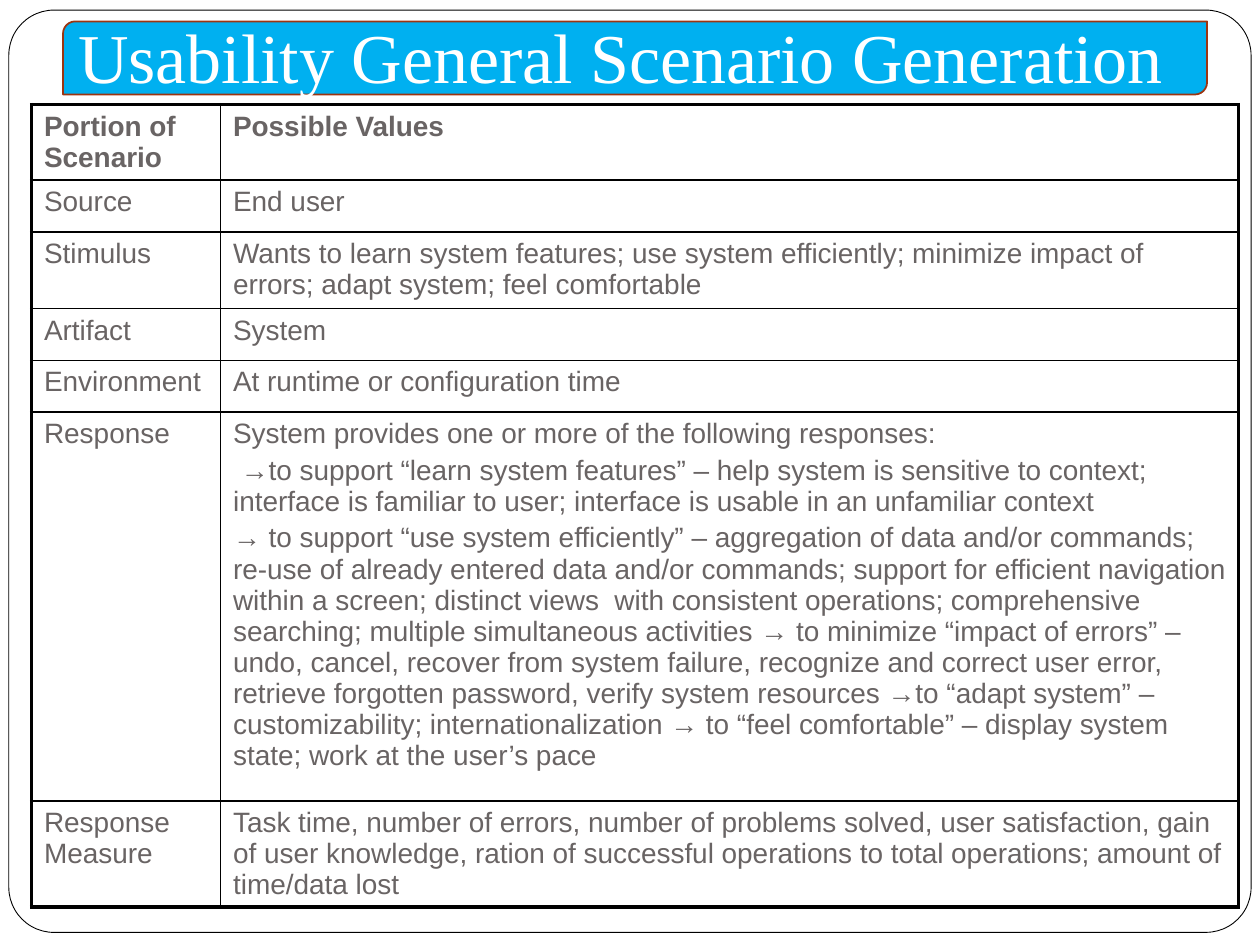
from pptx import Presentation
from pptx.dml.color import RGBColor
from pptx.enum.shapes import MSO_SHAPE as Shape
from pptx.enum.text import MSO_ANCHOR as Anchor, MSO_AUTO_SIZE as Auto, PP_ALIGN as Align
from pptx.oxml import parse_xml
from pptx.oxml.ns import nsdecls
from pptx.util import Inches, Pt

THICK, THIN = 2.25, 1
COLS = [1.5, 8.08]
ROWS = [
    (0.6, "Portion of Scenario", ["Possible Values"]),
    (0.41, "Source", ["End user"]),
    (0.61, "Stimulus", [
        "Wants to learn system features; use system efficiently; minimize impact of "
        "errors; adapt system; feel comfortable"]),
    (0.41, "Artifact", ["System"]),
    (0.41, "Environment", ["At runtime or configuration time"]),
    (3.09, "Response", [
        "System provides one or more of the following responses:",
        " →to support “learn system features” – help system is sensitive to context; "
        "interface is familiar to user; interface is usable in an unfamiliar context",
        "→ to support “use system efficiently” – aggregation of data and/or commands; "
        "re-use of already entered data and/or commands; support for efficient "
        "navigation within a screen; distinct views  with consistent operations; "
        "comprehensive searching; multiple simultaneous activities → to minimize "
        "“impact of errors” – undo, cancel, recover from system failure, recognize and "
        "correct user error, retrieve forgotten password, verify system resources "
        "→to “adapt system” – customizability; internationalization → to “feel "
        "comfortable” – display system state; work at the user’s pace"]),
    (0.84, "Response Measure", [
        "Task time, number of errors, number of problems solved, user satisfaction, "
        "gain of user knowledge, ration of successful operations to total operations; "
        "amount of time/data lost"]),
]


def color(code):
    return RGBColor.from_string(code)


def style(para, name, size, code, bold=False):
    font = para.font
    font.name, font.size, font.bold = name, Pt(size), bold
    font.color.rgb = color(code)


def add_panel(slide, kind, box, fill, line, width, level):
    panel = slide.shapes.add_shape(kind, *map(Inches, box))
    panel.shadow.inherit = False
    panel.fill.solid()
    panel.fill.fore_color.rgb = color(fill)
    panel.line.color.rgb = color(line)
    panel.line.width = Pt(width)
    # Keep panels behind the title; the tree's first two entries are not shapes
    slide.shapes._spTree.insert(2 + level, panel._element)
    return panel


def add_frame(slide, *box):
    frame = add_panel(slide, Shape.ROUNDED_RECTANGLE, box, "FFFFFF", "000000", 0.5, 0)
    frame.adjustments[0] = 0.049


def add_title(slide, x, y, w, h, text):
    # Banner
    add_panel(slide, Shape.ROUND_2_DIAG_RECTANGLE, (x, y, w, h),
              "00B0F0", "9C3511", 1, 1)
    # Title, with room above and below so that the line fits
    title = slide.shapes.title
    title.left, title.top = Inches(x), Inches(y - 0.08)
    title.width, title.height = Inches(w), Inches(h + 0.12)
    frame = title.text_frame
    frame.text = text
    frame.auto_size = Auto.NONE
    frame.word_wrap = True
    frame.vertical_anchor = Anchor.MIDDLE
    frame.margin_top = frame.margin_bottom = 0
    frame.margin_left = Inches(0.12)
    para = frame.paragraphs[0]
    para.alignment = Align.LEFT
    para.space_before, para.line_spacing = Pt(0), 1.0
    style(para, "Times New Roman", 40, "FFFFFF")


def add_borders(cell, sides):
    for side, width in sides.items():
        cell._tc.get_or_add_tcPr().append(parse_xml(
            f'<a:ln{side} {nsdecls("a")} w="{Pt(width)}"><a:solidFill>'
            f'<a:srgbClr val="000000"/></a:solidFill></a:ln{side}>'))


def add_grid(slide, x, y, w):
    height = sum(row[0] for row in ROWS)
    table = slide.shapes.add_table(
        len(ROWS), len(COLS), Inches(x), Inches(y), Inches(w), Inches(height)).table
    table.first_row = table.horz_banding = False
    for col, width in zip(table.columns, COLS):
        col.width = Inches(width)
    last = len(ROWS) - 1
    for r, (tall, label, values) in enumerate(ROWS):
        table.rows[r].height = Inches(tall)
        for c, lines in enumerate([[label], values]):
            cell = table.cell(r, c)
            # Thick outer edge, thin inner rules
            add_borders(cell, {
                "L": THICK if c == 0 else THIN,
                "R": THICK if c == 1 else THIN,
                "T": THICK if r == 0 else THIN,
                "B": THICK if r == last else THIN})
            cell.fill.background()
            cell.margin_right = Inches(0.08)
            cell.text = "\n".join(lines)
            for para in cell.text_frame.paragraphs:
                para.space_before = Pt(3.2)
                style(para, "Arial", 16, "696464", bold=r == 0)


def main():
    deck = Presentation()
    deck.slide_width, deck.slide_height = Inches(10), Inches(7.5)
    slide = deck.slides.add_slide(deck.slide_layouts[5])
    add_frame(slide, 0.07, 0.08, 9.86, 7.32)
    add_title(slide, 0.5, 0.17, 9.08, 0.58, "Usability General Scenario Generation")
    add_grid(slide, 0.25, 0.83, sum(COLS))
    deck.save("out.pptx")


if __name__ == "__main__":
    main()
